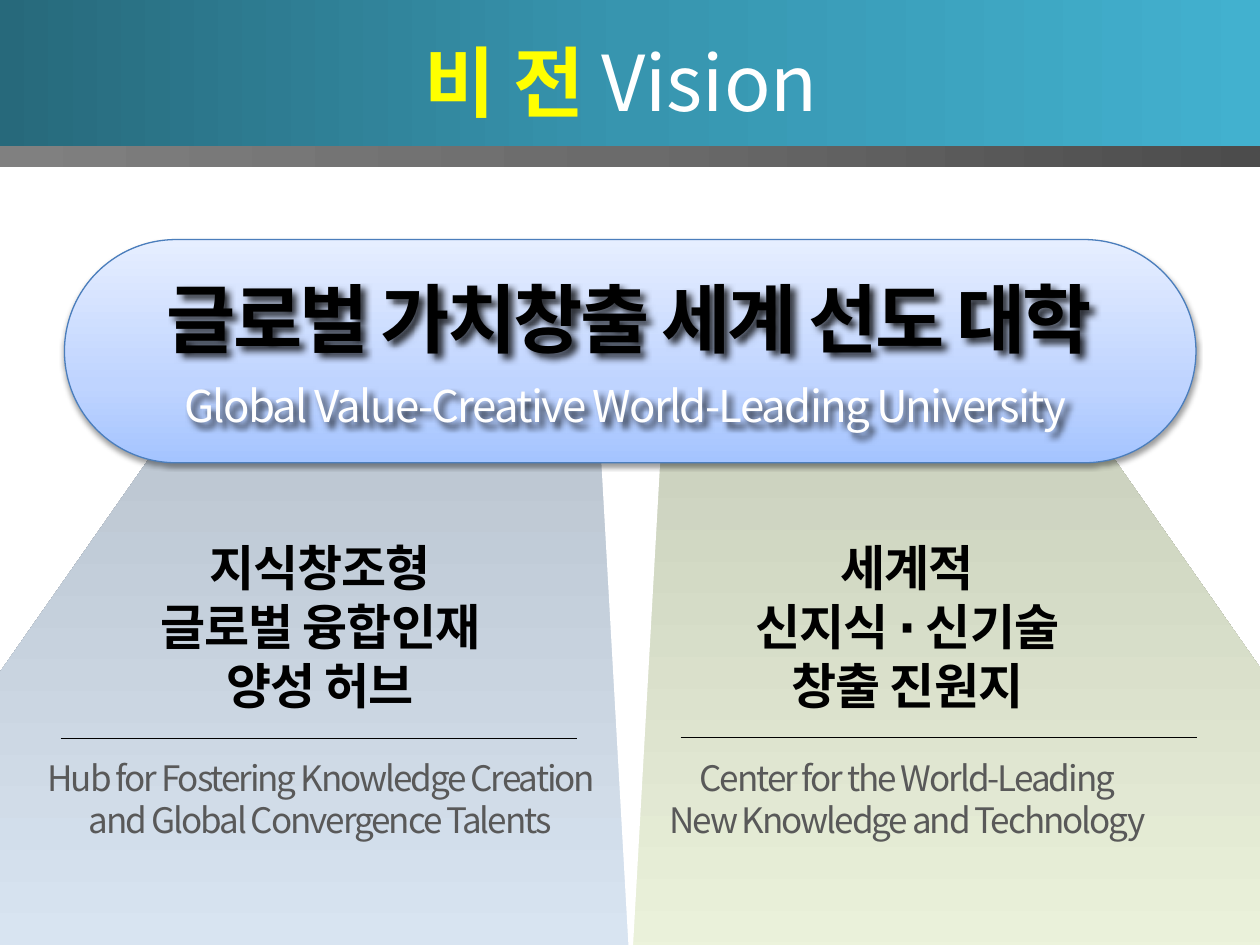
"""Build the university vision slide with two goal columns."""
from lxml.etree import SubElement
from pptx import Presentation
from pptx.dml.color import RGBColor
from pptx.enum.shapes import MSO_CONNECTOR, MSO_SHAPE
from pptx.enum.text import MSO_ANCHOR, PP_ALIGN
from pptx.oxml.ns import qn
from pptx.util import Cm, Pt

WIDTH, HEIGHT = 25.4, 19.05
COLUMN_TOP, COLUMN_HEIGHT = 10.72, 6.4
BAND_HEIGHT = 2.95


def color(value):
    return RGBColor.from_string(value)


class SlideBuilder:
    font = "Noto Sans CJK KR"

    def __init__(self, page):
        self.page = page

    def shape(self, kind, place, fill, angle=None, line=None, weight=0.75):
        shape = self.page.shapes.add_shape(kind, *map(Cm, place))
        shape.shadow.inherit = False
        if angle is None:
            shape.fill.solid()
            shape.fill.fore_color.rgb = color(fill)
        else:
            self.gradient(shape, fill, angle)
        if line:
            shape.line.color.rgb = color(line)
            shape.line.width = Pt(weight)
        else:
            shape.line.fill.background()
        return shape

    def gradient(self, shape, stops, angle):
        shape.fill.gradient()
        gradient = shape._element.spPr.find(qn("a:gradFill"))
        for child in list(gradient):
            gradient.remove(child)
        stop_list = SubElement(gradient, qn("a:gsLst"))
        for position, value in stops:
            stop = SubElement(stop_list, qn("a:gs"), pos=str(position * 1000))
            SubElement(stop, qn("a:srgbClr"), val=value)
        SubElement(gradient, qn("a:lin"), ang=str(angle * 60000), scaled="0")

    def shadow(self, shape, opacity, blur, distance, angle):
        shape.shadow.inherit = False
        effects = shape._element.spPr.find(qn("a:effectLst"))
        outer = SubElement(effects, qn("a:outerShdw"), blurRad=str(Pt(blur)),
                           dist=str(Pt(distance)), dir=str(angle * 60000),
                           algn="ctr", rotWithShape="0")
        tint = SubElement(outer, qn("a:srgbClr"), val="000000")
        SubElement(tint, qn("a:alpha"), val=str(opacity * 1000))

    def rule(self, left, right, top):
        line = self.page.shapes.add_connector(
            MSO_CONNECTOR.STRAIGHT, Cm(left), Cm(top), Cm(right), Cm(top))
        line.line.color.rgb = color("000000")
        line.line.width = Pt(0.5)
        SubElement(line._element.spPr, qn("a:effectLst"))

    def style(self, span, size, value, bold, spacing=0):
        span.font.size = Pt(size)
        span.font.bold = bold
        span.font.name = self.font
        span.font.color.rgb = color(value)
        properties = span._r.get_or_add_rPr()
        properties.set("spc", str(round(spacing * 100)))
        SubElement(properties, qn("a:ea"), typeface=self.font)

    def text(self, place, headings, caption, heading_style, caption_style, gap):
        box = self.page.shapes.add_textbox(*map(Cm, place))
        frame = box.text_frame
        frame.word_wrap = True
        frame.text = "\n".join(headings)
        for para in frame.paragraphs:
            self.style(para.runs[0], *heading_style)
        para = frame.add_paragraph()
        para.text = caption
        para.space_before = Pt(gap)
        for span in para.runs:
            self.style(span, *caption_style)
        for para in frame.paragraphs:
            para.alignment = PP_ALIGN.CENTER
        return box

    def title(self, place, spans):
        title = self.page.shapes.title
        title.left, title.top, title.width, title.height = map(Cm, place)
        frame = title.text_frame
        frame.vertical_anchor = MSO_ANCHOR.TOP
        para = frame.paragraphs[0]
        para.alignment = PP_ALIGN.CENTER
        para.line_spacing = 1.0
        para.space_before = Pt(0)
        for text, value, bold in spans:
            span = para.add_run()
            span.text = text
            self.style(span, 44, value, bold)
        self.page.shapes._spTree.append(title._element)

    def column(self, beam, stops, flipped, text_left, text_width, headings, caption, rule):
        triangle = self.shape(MSO_SHAPE.ISOSCELES_TRIANGLE, beam, stops, 90)
        triangle.adjustments[0] = 0
        if flipped:
            triangle._element.spPr.find(qn("a:xfrm")).set("flipH", "1")
        self.text((text_left, COLUMN_TOP, text_width, COLUMN_HEIGHT), headings, caption,
                  (28, "000000", True, -0.5), (20, "595959", False, -1.2), 24)
        self.rule(*rule)


def main():
    deck = Presentation()
    deck.slide_width, deck.slide_height = Cm(WIDTH), Cm(HEIGHT)
    builder = SlideBuilder(deck.slides.add_slide(deck.slide_layouts[5]))

    builder.column((12.73, -4.67, 16.99, 24.31),
                   [(0, "8C9083"), (50, "C7CDBA"), (100, "ECF3DC")], False, 13.11, 10.36,
                   ["세계적", "신지식 ∙ 신기술", "창출 진원지"],
                   "Center for the World-Leading\nNew Knowledge and Technology",
                   (13.72, 24.13, 14.86))
    builder.column((-4.29, -4.62, 16.99, 24.31),
                   [(0, "818890"), (50, "B8C2CD"), (100, "DAE6F3")], True, 0.51, 11.89,
                   ["지식창조형", "글로벌 융합인재", "양성 허브"],
                   "Hub for Fostering Knowledge Creation and Global Convergence Talents",
                   (1.22, 11.63, 14.88))
    wedge = builder.shape(MSO_SHAPE.ISOSCELES_TRIANGLE, (11.99, 6.32, 1.45, 12.93),
                          "FFFFFF", line="FFFFFF", weight=2)
    wedge.rotation = 180

    builder.shape(MSO_SHAPE.RECTANGLE, (3.71, 1.63, 18.01, 3.71), "FFFFFF")
    builder.shape(MSO_SHAPE.RECTANGLE, (0, 0, WIDTH, BAND_HEIGHT),
                  [(0, "27697B"), (50, "3795AF"), (100, "42B1CF")], 0)
    builder.shape(MSO_SHAPE.RECTANGLE, (0, BAND_HEIGHT, WIDTH, 0.41),
                  [(0, "4C4C4C"), (50, "6B6B6B"), (100, "808080")], 180)

    pill = builder.shape(MSO_SHAPE.ROUNDED_RECTANGLE, (1.3, 4.83, 22.81, 4.5),
                         [(0, "A4C4FF"), (35, "BFD4FF"), (100, "E6EEFF")], 270, "4B7EBC")
    pill.adjustments[0] = 0.5
    builder.shadow(pill, 38, 3.1, 1.6, 90)
    slogan = builder.text((0.86, 5.36, 23.65, 3.58), ["글로벌 가치창출 세계 선도 대학"],
                          "Global Value-Creative World-Leading University ",
                          (43, "000000", True, -1.5), (25, "FFFFFF", False, -1), 9.6)
    builder.shadow(slogan, 80, 4, 3, 45)

    builder.title((4.8, 0.56, 15.8, 2.13),
                  [("비 전 ", "FFFF00", True), ("Vision ", "FFFFFF", False)])
    deck.save("out.pptx")


if __name__ == "__main__":
    main()
